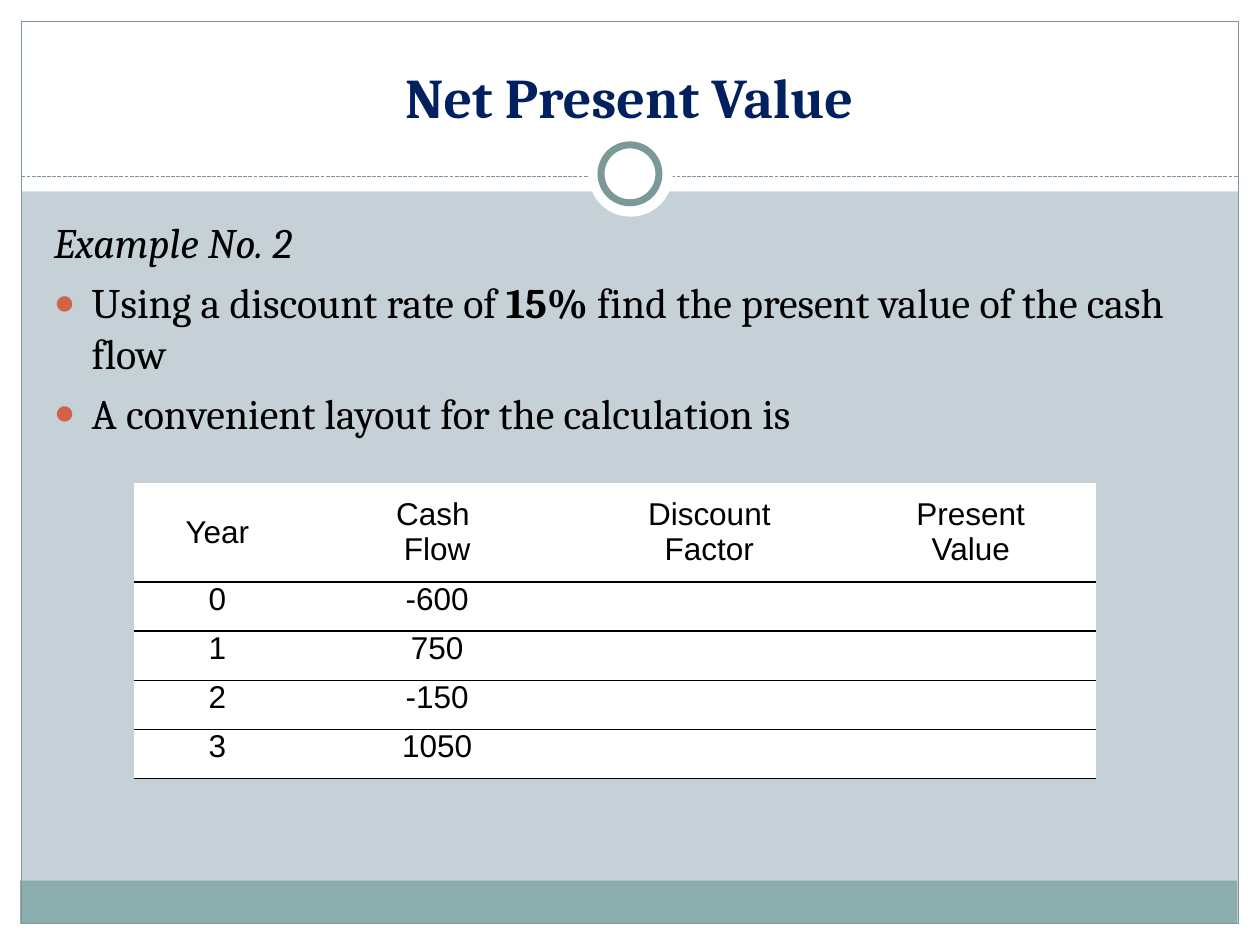
"""Build the Net Present Value slide with its cash flow table."""
from lxml import etree
from pptx import Presentation
from pptx.dml.color import RGBColor
from pptx.enum.dml import MSO_LINE
from pptx.enum.shapes import MSO_CONNECTOR, MSO_SHAPE
from pptx.enum.text import MSO_ANCHOR, PP_ALIGN
from pptx.oxml.ns import qn
from pptx.util import Inches, Pt

RECTANGLE, ELLIPSE = MSO_SHAPE.RECTANGLE, MSO_SHAPE.OVAL
STRAIGHT, DASH = MSO_CONNECTOR.STRAIGHT, MSO_LINE.SQUARE_DOT
TOP, MIDDLE, BOTTOM = MSO_ANCHOR.TOP, MSO_ANCHOR.MIDDLE, MSO_ANCHOR.BOTTOM
CENTER = PP_ALIGN.CENTER

THEME = {
    "background": "C5D1D7", "white": "FFFFFF", "footer": "8CADAE", "frame": "7C999A",
    "title": "002060", "text": "000000", "bullet": "D16349",
    "serif": "Cambria", "sans": "Arial",
    "title_size": 32, "body_size": 24, "table_size": 18,
}

TITLE = "Net Present Value"
BODY = [
    {"bullet": False, "runs": [("Example No. 2", {"italic": True})]},
    {"bullet": True, "runs": [
        ("Using a discount rate of ", {}),
        ("15%", {"bold": True}),
        (" find the present value of the cash flow", {}),
    ]},
    {"bullet": True, "runs": [("A convenient layout for the calculation is", {})]},
]
TABLE_ROWS = [
    ("Year", "Cash \nFlow", "Discount\nFactor", "Present\nValue"),
    ("0", "-600", "", ""),
    ("1", "750", "", ""),
    ("2", "-150", "", ""),
    ("3", "1050", "", ""),
]
COLUMN_WIDTHS = (1.33, 2.16, 2.16, 1.99)
ROW_HEIGHTS = (0.79,) + (0.39,) * 4

FRAME_SHAPES = [
    (RECTANGLE, (0, 7.33, 10, 0.17), "white", None),
    (RECTANGLE, (0, 0, 10, 1.52), "white", None),
    (RECTANGLE, (0, 0, 0.17, 7.5), "white", None),
    (RECTANGLE, (9.83, 0, 0.17, 7.5), "white", None),
    (RECTANGLE, (0.16, 6.99, 9.66, 0.34), "footer", None),
    (RECTANGLE, (0.17, 0.17, 9.66, 7.16), None, 0.75),
]
RING_SHAPES = [
    (ELLIPSE, (4.67, 1.05, 0.67, 0.67), "white", None),
    (ELLIPSE, (4.77, 1.15, 0.46, 0.46), "white", 4),
]


def color(name):
    return RGBColor.from_string(THEME[name])


def set_format(target, values):
    for name, value in values.items():
        setattr(target, name, value)


def add_run(paragraph, text, font, size, ink, **values):
    run = paragraph.add_run()
    run.text = text
    set_format(run.font, {"name": THEME[font], "size": Pt(THEME[size]), **values})
    run.font.color.rgb = color(ink)


def add_shapes(slide, items):
    for kind, box, fill, line_width in items:
        shape = slide.shapes.add_shape(kind, *map(Inches, box))
        shape.shadow.inherit = False
        if fill:
            shape.fill.solid()
            shape.fill.fore_color.rgb = color(fill)
        else:
            shape.fill.background()
        if line_width:
            shape.line.color.rgb = color("frame")
            shape.line.width = Pt(line_width)
        else:
            shape.line.fill.background()


def add_divider(slide):
    divider = slide.shapes.add_connector(
        STRAIGHT, Inches(0.17), Inches(1.4), Inches(9.83), Inches(1.4))
    divider.line.color.rgb = color("frame")
    set_format(divider.line, {"width": Pt(0.75), "dash_style": DASH})
    etree.SubElement(divider._element.spPr, qn("a:effectLst"))


def place_title(slide):
    title = slide.shapes.title
    set_format(title, {"left": Inches(0.33), "top": Inches(0.25),
                       "width": Inches(9.33), "height": Inches(0.83)})
    set_format(title.text_frame, {"vertical_anchor": BOTTOM, "word_wrap": True})
    paragraph = title.text_frame.paragraphs[0]
    paragraph.alignment = CENTER
    add_run(paragraph, TITLE, "serif", "title_size", "title", bold=True)
    slide.shapes._spTree.append(title._element)


def add_bullet(paragraph):
    properties = paragraph._p.get_or_add_pPr()
    properties.set("marL", str(Inches(0.3)))
    properties.set("indent", str(-Inches(0.3)))
    bullet_color = etree.SubElement(properties, qn("a:buClr"))
    etree.SubElement(bullet_color, qn("a:srgbClr"), val=THEME["bullet"])
    etree.SubElement(properties, qn("a:buSzPct"), val="85000")
    etree.SubElement(properties, qn("a:buFont"), typeface=THEME["sans"])
    etree.SubElement(properties, qn("a:buChar"), char="●")


def add_body(slide):
    box = slide.shapes.add_textbox(Inches(0.33), Inches(1.67), Inches(9.16), Inches(5))
    frame = box.text_frame
    frame.word_wrap = True
    for index, item in enumerate(BODY):
        paragraph = frame.add_paragraph() if index else frame.paragraphs[0]
        paragraph.space_before = Pt(5.6)
        if item["bullet"]:
            add_bullet(paragraph)
        for text, values in item["runs"]:
            add_run(paragraph, text, "serif", "body_size", "text", **values)


def set_borders(cell, ruled_sides):
    properties = cell._tc.get_or_add_tcPr()
    for index, side in enumerate("LRTB"):
        border = etree.Element(qn(f"a:ln{side}"), w=str(Pt(1)))
        if side in ruled_sides:
            fill = etree.SubElement(border, qn("a:solidFill"))
            etree.SubElement(fill, qn("a:srgbClr"), val=THEME["text"])
        else:
            etree.SubElement(border, qn("a:noFill"))
        properties.insert(index, border)


def fill_cell(cell, text, is_header):
    set_format(cell, {
        "margin_left": Inches(0.08), "margin_right": Inches(0.08),
        "margin_top": 0, "margin_bottom": 0,
        "vertical_anchor": MIDDLE if is_header else TOP,
    })
    cell.fill.solid()
    cell.fill.fore_color.rgb = color("white")
    set_borders(cell, "B" if is_header else "TB")
    for index, line in enumerate(text.split("\n") if text else []):
        frame = cell.text_frame
        paragraph = frame.add_paragraph() if index else frame.paragraphs[0]
        paragraph.alignment = CENTER
        add_run(paragraph, line, "sans", "table_size", "text")


def add_cash_flow_table(slide):
    table = slide.shapes.add_table(
        len(TABLE_ROWS), len(COLUMN_WIDTHS), Inches(1.06), Inches(3.83),
        Inches(sum(COLUMN_WIDTHS)), Inches(sum(ROW_HEIGHTS))).table
    set_format(table, {"first_row": False, "horz_banding": False})
    for column, width in zip(table.columns, COLUMN_WIDTHS):
        column.width = Inches(width)
    for index, (row, height, texts) in enumerate(zip(table.rows, ROW_HEIGHTS, TABLE_ROWS)):
        row.height = Inches(height)
        for cell, text in zip(row.cells, texts):
            fill_cell(cell, text, index == 0)


def main():
    presentation = Presentation()
    set_format(presentation, {"slide_width": Inches(10), "slide_height": Inches(7.5)})
    slide = presentation.slides.add_slide(presentation.slide_layouts[5])
    slide.background.fill.solid()
    slide.background.fill.fore_color.rgb = color("background")
    add_shapes(slide, FRAME_SHAPES)
    add_divider(slide)
    add_shapes(slide, RING_SHAPES)
    place_title(slide)
    add_body(slide)
    add_cash_flow_table(slide)
    presentation.save("out.pptx")


if __name__ == "__main__":
    main()
